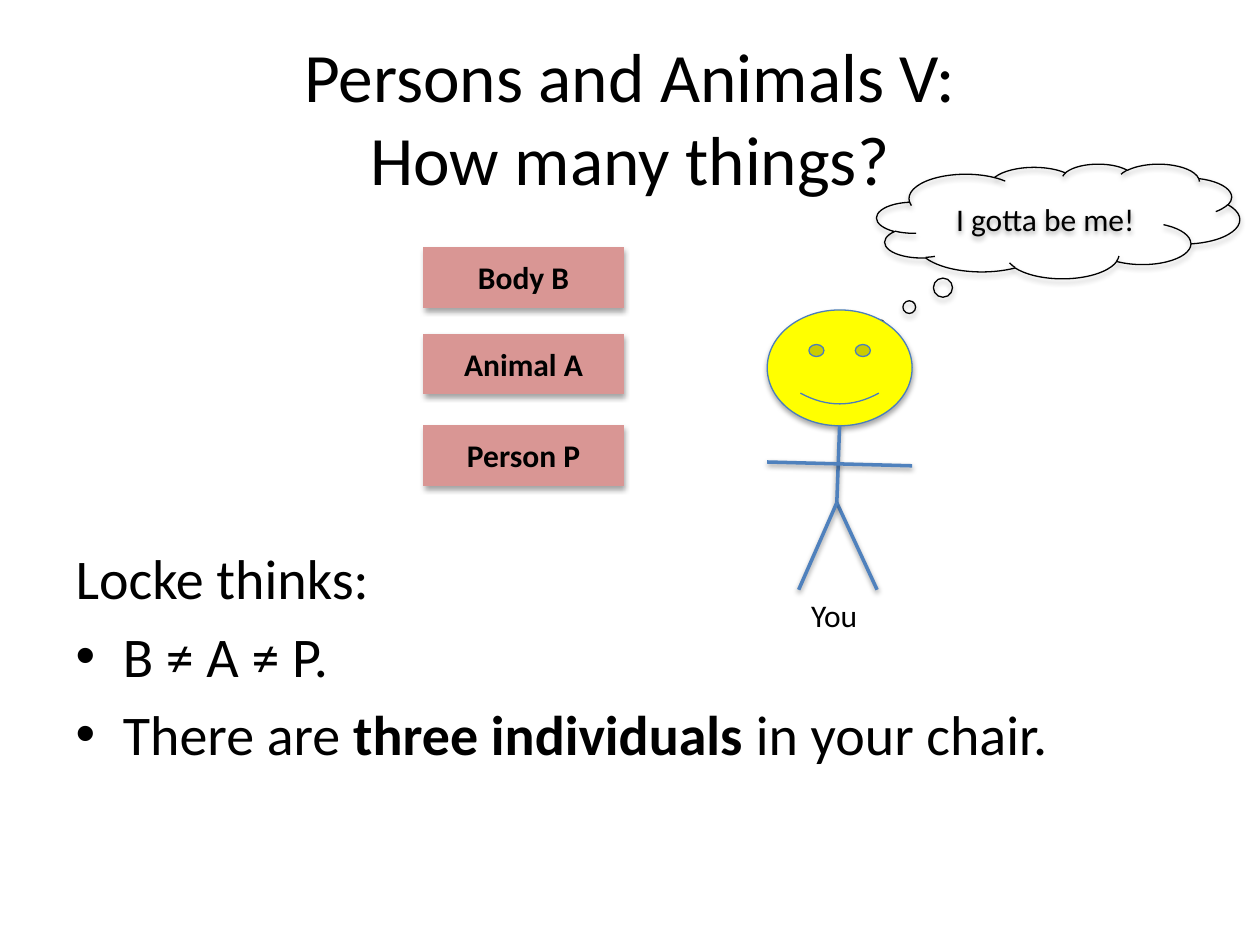
from dataclasses import dataclass

from lxml import etree
from pptx import Presentation
from pptx.dml.color import RGBColor
from pptx.enum.shapes import MSO_CONNECTOR, MSO_SHAPE
from pptx.enum.text import MSO_ANCHOR, MSO_AUTO_SIZE, PP_ALIGN
from pptx.oxml.ns import qn
from pptx.util import Pt

CALLOUT = MSO_SHAPE.LINE_CALLOUT_1_NO_BORDER
CLOUD = MSO_SHAPE.CLOUD_CALLOUT
SMILEY = MSO_SHAPE.SMILEY_FACE
STRAIGHT = MSO_CONNECTOR.STRAIGHT
MIDDLE = MSO_ANCHOR.MIDDLE
CENTER, LEFT = PP_ALIGN.CENTER, PP_ALIGN.LEFT


@dataclass(frozen=True)
class Theme:
    font: str = "Calibri"
    ink: str = "000000"
    label_fill: str = "D99694"
    face_fill: str = "FFFF00"
    face_line: str = "4B7EBC"
    limb: str = "4F81BD"
    title_size: float = 39.6
    body_size: float = 32
    label_size: float = 18
    outline: float = 0.75
    limb_width: float = 2


THEME = Theme()


def color(value):
    return RGBColor.from_string(value)


def add_run(paragraph, text, size, bold=False):
    run = paragraph.add_run()
    run.text = text
    run.font.name = THEME.font
    run.font.size = Pt(size)
    run.font.bold = bold
    run.font.color.rgb = color(THEME.ink)


def add_shadow(shape, opacity, distance):
    """Cast a soft shadow straight down; call after the line is set."""
    properties = shape._element.spPr
    for effects in properties.findall(qn("a:effectLst")):
        properties.remove(effects)
    effects = etree.SubElement(properties, qn("a:effectLst"))
    shadow = etree.SubElement(
        effects, qn("a:outerShdw"), blurRad=str(Pt(3.1)), dist=str(Pt(distance)),
        dir="5400000", rotWithShape="0")
    shade = etree.SubElement(shadow, qn("a:srgbClr"), val=THEME.ink)
    etree.SubElement(shade, qn("a:alpha"), val=str(opacity * 1000))


def place(shape, box):
    shape.left, shape.top, shape.width, shape.height = (Pt(length) for length in box)


def add_figure(shapes, kind, box, fill=None, line=None, adjustments=()):
    """Add a shadowed preset shape; no fill or line colour means none drawn."""
    shape = shapes.add_shape(kind, *(Pt(length) for length in box))
    for index, value in enumerate(adjustments):
        shape.adjustments[index] = value
    if fill:
        shape.fill.solid()
        shape.fill.fore_color.rgb = color(fill)
    else:
        shape.fill.background()
    if line:
        shape.line.color.rgb = color(line)
        shape.line.width = Pt(THEME.outline)
    else:
        shape.line.fill.background()
    add_shadow(shape, opacity=35, distance=1.8)
    return shape


def write_label(shape, text, bold=False, alignment=CENTER):
    paragraph = shape.text_frame.paragraphs[0]
    paragraph.alignment = alignment
    add_run(paragraph, text, THEME.label_size, bold)


def fill_title(title, box, lines):
    place(title, box)
    frame = title.text_frame
    frame.auto_size = MSO_AUTO_SIZE.NONE
    frame.vertical_anchor = MIDDLE
    paragraph = frame.paragraphs[0]
    paragraph.alignment = CENTER
    for index, line in enumerate(lines):
        if index:
            paragraph.add_line_break()
        add_run(paragraph, line, THEME.title_size)


def fill_body(body, box, items):
    """Write (bulleted, runs) items, where each run is (text, bold)."""
    place(body, box)
    frame = body.text_frame
    frame.auto_size = MSO_AUTO_SIZE.NONE
    for index, (bulleted, runs) in enumerate(items):
        paragraph = frame.add_paragraph() if index else frame.paragraphs[0]
        properties = paragraph._p.get_or_add_pPr()
        properties.set("marL", str(Pt(27)))
        properties.set("indent", str(-Pt(27)))
        if bulleted:
            etree.SubElement(properties, qn("a:buChar"), char="•")
        else:
            etree.SubElement(properties, qn("a:buNone"))
        for text, bold in runs:
            add_run(paragraph, text, THEME.body_size, bold)


def add_labels(slide, box, labels):
    """Stack (offset, text) labels inside the box."""
    left, top, width, height = box
    for offset, text in labels:
        label = add_figure(
            slide.shapes, CALLOUT, (left, top + offset, width, height),
            fill=THEME.label_fill, adjustments=(0.551, -0.023, -1.154, -2.374))
        label.text_frame.vertical_anchor = MIDDLE
        write_label(label, text, bold=True)


def add_thinker(slide, origin, thought, name):
    """Draw a stick figure with a thought cloud and a caption."""
    left, top = origin
    shapes = slide.shapes.add_group_shape().shapes

    def inside(x, y, width, height):
        return left + x, top + y, width, height

    cloud = add_figure(shapes, CLOUD, inside(62.6, 0, 207.4, 65.5),
                       line=THEME.ink, adjustments=(-0.488, 0.892))
    cloud.text_frame.vertical_anchor = MIDDLE
    write_label(cloud, thought)
    add_figure(shapes, SMILEY, inside(0, 83.5, 82.8, 66.2),
               fill=THEME.face_fill, line=THEME.face_line)

    neck, hip = (41.4, 149.4), (39.8, 193.7)
    left_hand, right_hand = (0, 170.4), (82.8, 172.6)
    left_foot, right_foot = (18, 243.4), (62.8, 243.4)
    for start, end in ((neck, hip), (left_hand, right_hand),
                       (hip, right_foot), (hip, left_foot)):
        limb = shapes.add_connector(
            STRAIGHT, Pt(left + start[0]), Pt(top + start[1]),
            Pt(left + end[0]), Pt(top + end[1]))
        limb.line.color.rgb = color(THEME.limb)
        limb.line.width = Pt(THEME.limb_width)
        add_shadow(limb, opacity=38, distance=1.6)

    caption = shapes.add_textbox(*(Pt(length) for length in inside(18, 243.4, 43.2, 29.5)))
    caption.text_frame.word_wrap = False
    caption.text_frame.auto_size = MSO_AUTO_SIZE.SHAPE_TO_FIT_TEXT
    write_label(caption, name, alignment=LEFT)


def main():
    presentation = Presentation()
    presentation.slide_width, presentation.slide_height = Pt(720), Pt(540)
    slide = presentation.slides.add_slide(presentation.slide_layouts[1])
    fill_title(slide.shapes.title, (36, 21.6, 648, 90),
               ("Persons and Animals V:", "How many things?"))
    fill_body(slide.placeholders[1], (36, 306.7, 648, 175.7), (
        (False, (("Locke thinks:", False),)),
        (True, (("B ≠ A ≠ P.", False),)),
        (True, (("There are ", False), ("three individuals", True),
                (" in your chair.", False))),
    ))
    add_labels(slide, (241.9, 141.1, 114.5, 34.7),
               ((0, "Body B"), (49.5, "Animal A"), (101.7, "Person P")))
    add_thinker(slide, (438.4, 93.6), "I gotta be me!", "You")
    presentation.save("out.pptx")


if __name__ == "__main__":
    main()
